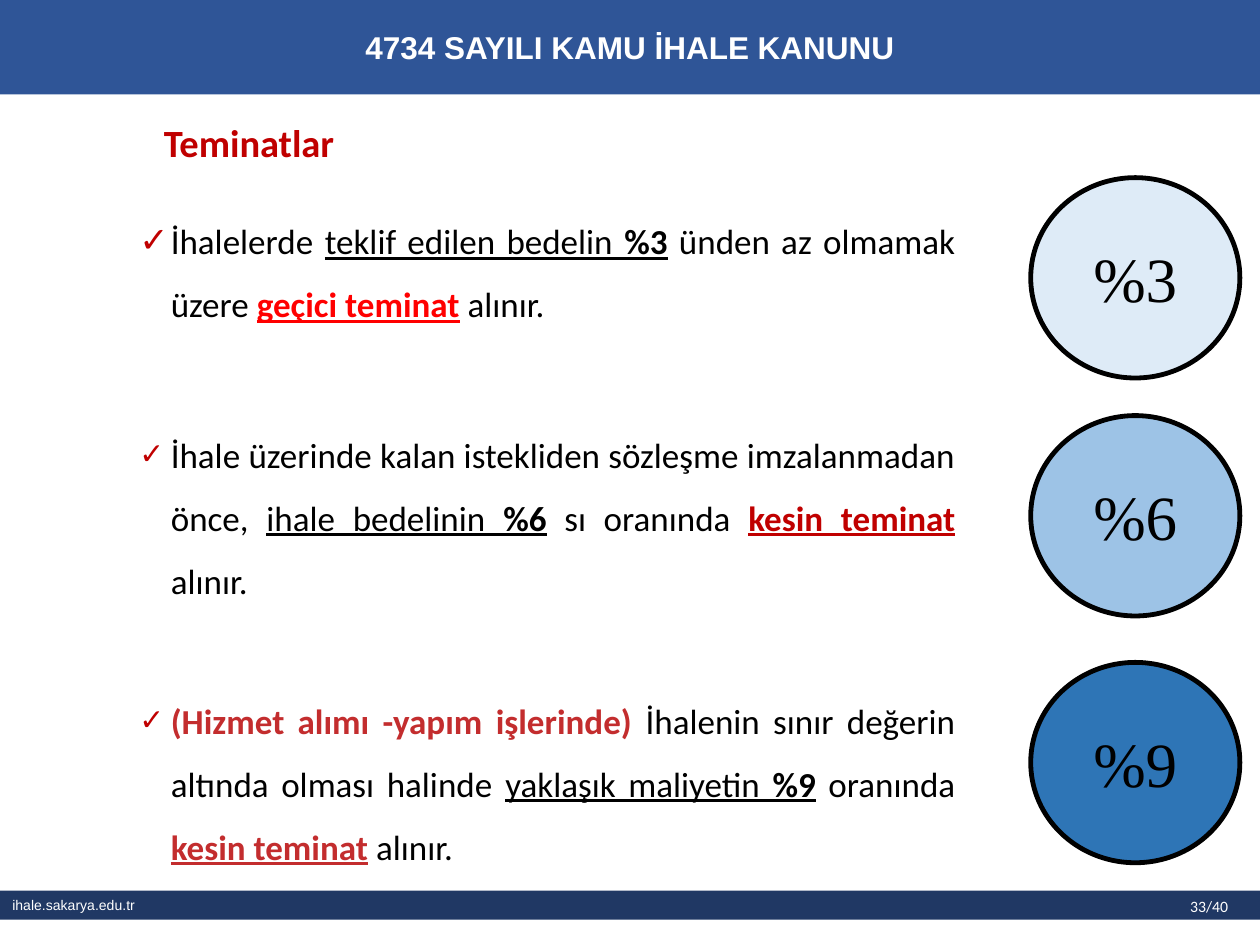
import pptx
import pptx.util
import pptx.dml.color
import pptx.enum.shapes
import pptx.enum.text
import pptx.oxml.ns
from lxml import etree

Pt = pptx.util.Pt
RGBColor = pptx.dml.color.RGBColor
SHAPE = pptx.enum.shapes.MSO_SHAPE
ALIGN = pptx.enum.text.PP_ALIGN
ANCHOR = pptx.enum.text.MSO_ANCHOR

WHITE = RGBColor(0xFF, 0xFF, 0xFF)
BLACK = RGBColor(0, 0, 0)
NAVY = RGBColor(0x20, 0x38, 0x64)
BLUE = RGBColor(0x2F, 0x55, 0x97)
DARK_RED = RGBColor(0xC0, 0, 0)
RED = RGBColor(0xFF, 0, 0)
BRICK = RGBColor(0xC3, 0x2D, 0x2E)
PALE_BLUE = RGBColor(0xDE, 0xEB, 0xF7)
LIGHT_BLUE = RGBColor(0x9D, 0xC3, 0xE6)
MID_BLUE = RGBColor(0x2E, 0x75, 0xB6)

UNDER = {"underline": True}
BOLD_UNDER = {"bold": True, "underline": True}

RULES = [
    (100, 0, [
        ("İhalelerde ", {}), ("teklif edilen bedelin ", UNDER), ("%3", BOLD_UNDER),
        (" ünden az olmamak üzere ", {}), ("geçici teminat", {**BOLD_UNDER, "color": RED}),
        (" alınır.", {})]),
    (85, 50, [
        ("İhale üzerinde kalan istekliden sözleşme imzalanmadan önce, ", {}),
        ("ihale bedelinin ", UNDER), ("%6", BOLD_UNDER), (" sı oranında ", {}),
        ("kesin teminat ", {**BOLD_UNDER, "color": DARK_RED}), ("alınır.", {})]),
    (85, 44, [
        ("(Hizmet alımı -yapım işlerinde) ", {"bold": True, "color": BRICK}),
        ("İhalenin sınır değerin altında olması halinde ", {}),
        ("yaklaşık maliyetin ", UNDER), ("%9", BOLD_UNDER), (" oranında ", {}),
        ("kesin teminat", {**BOLD_UNDER, "color": BRICK}), (" alınır.", {})]),
]

RATES = [("%3", 101.5, PALE_BLUE), ("%6", 237.5, LIGHT_BLUE), ("%9", 378.5, MID_BLUE)]


def add_run(p, text, name, size, color=BLACK, **values):
    """Add a formatted run to a paragraph."""
    r = p.add_run()
    r.text = text
    for key, value in {"name": name, "size": Pt(size), **values}.items():
        setattr(r.font, key, value)
    r.font.color.rgb = color


def add_filled(s, kind, box, fill):
    """Add a filled shape without line or shadow and return it."""
    sp = s.shapes.add_shape(kind, *map(Pt, box))
    sp.shadow.inherit = False
    sp.fill.solid()
    sp.fill.fore_color.rgb = fill
    sp.line.fill.background()
    sp.text_frame.vertical_anchor = ANCHOR.MIDDLE
    return sp


def add_text_box(s, box):
    """Add a wrapping text box and return its text frame."""
    tf = s.shapes.add_textbox(*map(Pt, box)).text_frame
    tf.word_wrap = True
    return tf


def add_band(s, box, fill, text, align, size, bold=False):
    """Add a full-width band with white text."""
    p = add_filled(s, SHAPE.RECTANGLE, box, fill).text_frame.paragraphs[0]
    p.alignment = align
    add_run(p, text, "Arial", size, WHITE, bold=bold)


def add_label(s, box, text, size, color, bold=False, spacing=1.0):
    """Add a one-line text box."""
    p = add_text_box(s, box).paragraphs[0]
    p.line_spacing = spacing
    add_run(p, text, "Calibri", size, color, bold=bold)


def set_check(p, percent):
    """Give a paragraph a hanging dark red check mark."""
    pPr = p._p.get_or_add_pPr()
    pPr.set("marL", str(Pt(18)))
    pPr.set("indent", str(-Pt(18)))
    qn = pptx.oxml.ns.qn
    clr = etree.SubElement(pPr, qn("a:buClr"))
    etree.SubElement(clr, qn("a:srgbClr")).set("val", str(DARK_RED))
    etree.SubElement(pPr, qn("a:buSzPct")).set("val", str(percent * 1000))
    etree.SubElement(pPr, qn("a:buFont")).set("typeface", "Arial")
    etree.SubElement(pPr, qn("a:buChar")).set("char", "✓")


def add_rules(s, box, rules):
    """Add the justified check list of guarantee rules."""
    tf = add_text_box(s, box)
    for i, (percent, gap, runs) in enumerate(rules):
        p = tf.add_paragraph() if i else tf.paragraphs[0]
        p.alignment = ALIGN.JUSTIFY
        p.line_spacing = 1.5
        if gap:
            p.space_before = Pt(gap)
        set_check(p, percent)
        for text, values in runs:
            add_run(p, text, "Calibri", 20, **values)


def add_rate(s, box, text, fill):
    """Add an outlined circle holding a rate."""
    sp = add_filled(s, SHAPE.OVAL, box, fill)
    sp.line.color.rgb = BLACK
    sp.line.width = Pt(2.75)
    p = sp.text_frame.paragraphs[0]
    p.alignment = ALIGN.CENTER
    add_run(p, text, "Times New Roman", 36)


def main():
    """Build and save the slide."""
    prs = pptx.Presentation()
    prs.slide_width, prs.slide_height = Pt(720), Pt(540)
    s = prs.slides.add_slide(prs.slide_layouts[6])
    add_band(s, (0, 509, 720, 16.5), NAVY, "ihale.sakarya.edu.tr", ALIGN.LEFT, 8)
    add_band(s, (0, 0, 720, 54), BLUE, "4734 SAYILI KAMU İHALE KANUNU", ALIGN.CENTER, 18, True)
    add_label(s, (673, 509, 67, 18), "33/40", 9, WHITE)
    add_label(s, (86.5, 67.5, 600, 34), "Teminatlar", 22, DARK_RED, True, 0.9)
    add_rules(s, (72.5, 110, 480.5, 383), RULES)
    for text, top, fill in RATES:
        add_rate(s, (589, top, 119.5, 114.5), text, fill)
    prs.save("out.pptx")


if __name__ == "__main__":
    main()
